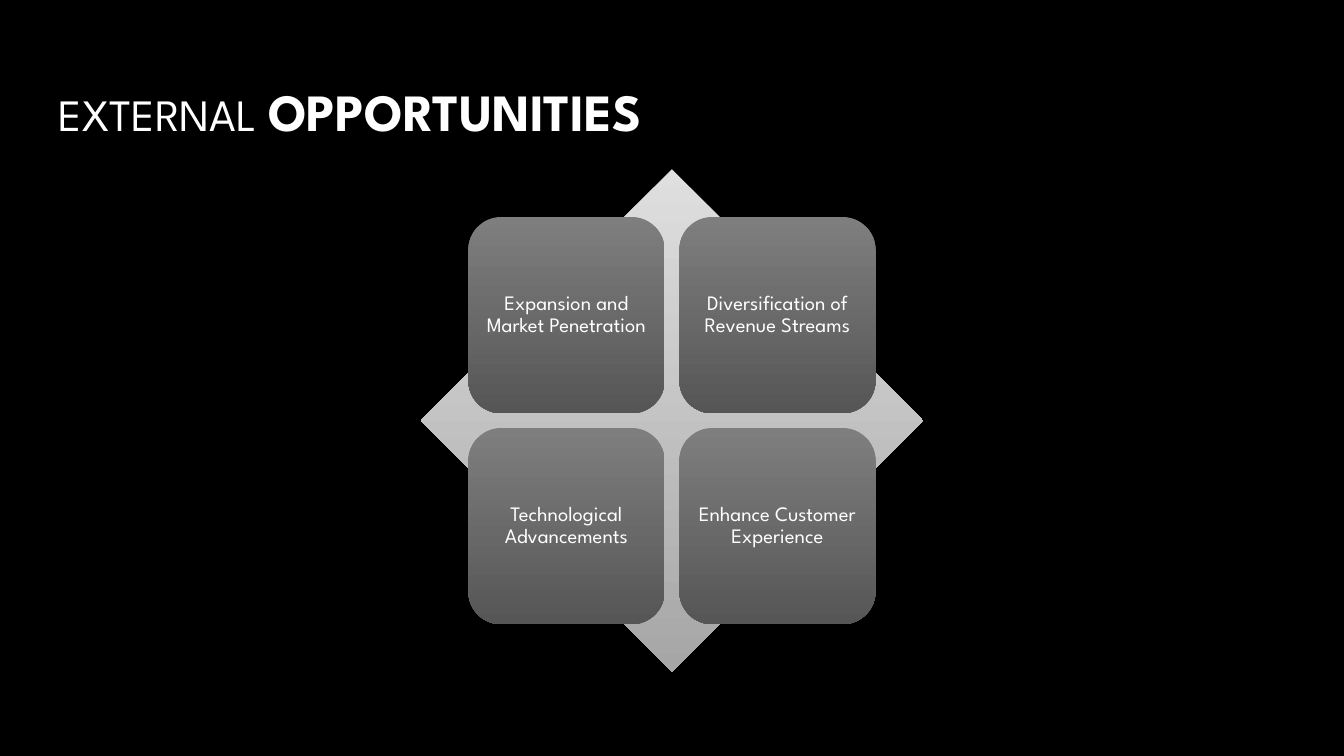
from pptx import Presentation
from pptx.dml.color import RGBColor
from pptx.enum.shapes import MSO_SHAPE
from pptx.enum.text import MSO_ANCHOR, PP_ALIGN
from pptx.util import Inches, Pt

DIAMOND = MSO_SHAPE.DIAMOND
ROUNDED = MSO_SHAPE.ROUNDED_RECTANGLE
MIDDLE = MSO_ANCHOR.MIDDLE
TOP = MSO_ANCHOR.TOP
CENTER = PP_ALIGN.CENTER

BLACK = RGBColor(0x00, 0x00, 0x00)
WHITE = RGBColor(0xFF, 0xFF, 0xFF)
LIGHT_GRAY = RGBColor(0xDF, 0xDF, 0xDF)
SILVER = RGBColor(0xA6, 0xA6, 0xA6)
GRAY = RGBColor(0x7E, 0x7E, 0x7E)
DARK_GRAY = RGBColor(0x56, 0x56, 0x56)

OPPORTUNITIES = [
    ["Expansion and Market Penetration", "Diversification of Revenue Streams"],
    ["Technological Advancements", "Enhance Customer Experience"],
]
CENTER_X, CENTER_Y = 5, 3.13
DIAMOND_SIZE = 3.74
CARD_SIZE, CARD_PITCH = 1.46, 1.57


class SlideBuilder:
    font_name = "League Spartan"

    def __init__(self, slide):
        self.slide = slide
        background = slide.background.fill
        background.solid()
        background.fore_color.rgb = BLACK

    def gradient(self, fill, start, end, angle=270):
        fill.gradient()
        fill.gradient_angle = angle
        for stop, color in zip(fill.gradient_stops, (start, end)):
            stop.color.rgb = color

    def frame(self, shape, inset, anchor):
        frame = shape.text_frame
        frame.word_wrap = True
        frame.vertical_anchor = anchor
        frame.margin_left = frame.margin_right = Inches(inset)
        frame.margin_top = frame.margin_bottom = Inches(inset)
        paragraph = frame.paragraphs[0]
        paragraph.font.name = self.font_name
        return paragraph

    def title(self, left, top, width, height, parts):
        box = self.slide.shapes.add_textbox(
            Inches(left), Inches(top), Inches(width), Inches(height))
        paragraph = self.frame(box, 0.1, TOP)
        for text, size, bold in parts:
            run = paragraph.add_run()
            run.text = text
            run.font.size = Pt(size)
            run.font.bold = bold
            self.gradient(run.font.fill, WHITE, SILVER, 267)

    def shape(self, kind, center_x, center_y, size, start, end):
        shape = self.slide.shapes.add_shape(
            kind, Inches(center_x - size / 2), Inches(center_y - size / 2),
            Inches(size), Inches(size))
        shape.shadow.inherit = False
        shape.line.fill.background()
        self.gradient(shape.fill, start, end)
        return shape

    def card(self, center_x, center_y, text):
        card = self.shape(ROUNDED, center_x, center_y, CARD_SIZE,
                          GRAY, DARK_GRAY)
        paragraph = self.frame(card, 0.05, MIDDLE)
        paragraph.text = text
        paragraph.alignment = CENTER
        paragraph.line_spacing = 0.9
        paragraph.font.size = Pt(11)
        paragraph.font.color.rgb = WHITE


def main():
    presentation = Presentation()
    presentation.slide_width = Inches(10)
    presentation.slide_height = Inches(10 * 9 / 16)
    builder = SlideBuilder(
        presentation.slides.add_slide(presentation.slide_layouts[6]))

    builder.title(0.34, 0.49, 9.32, 0.63,
                  [("EXTERNAL ", 24, False), ("OPPORTUNITIES", 28, True)])
    builder.shape(DIAMOND, CENTER_X, CENTER_Y, DIAMOND_SIZE,
                  LIGHT_GRAY, SILVER)
    for row, texts in enumerate(OPPORTUNITIES):
        for column, text in enumerate(texts):
            builder.card(CENTER_X + (column - 0.5) * CARD_PITCH,
                         CENTER_Y + (row - 0.5) * CARD_PITCH, text)

    presentation.save("out.pptx")


if __name__ == "__main__":
    main()
